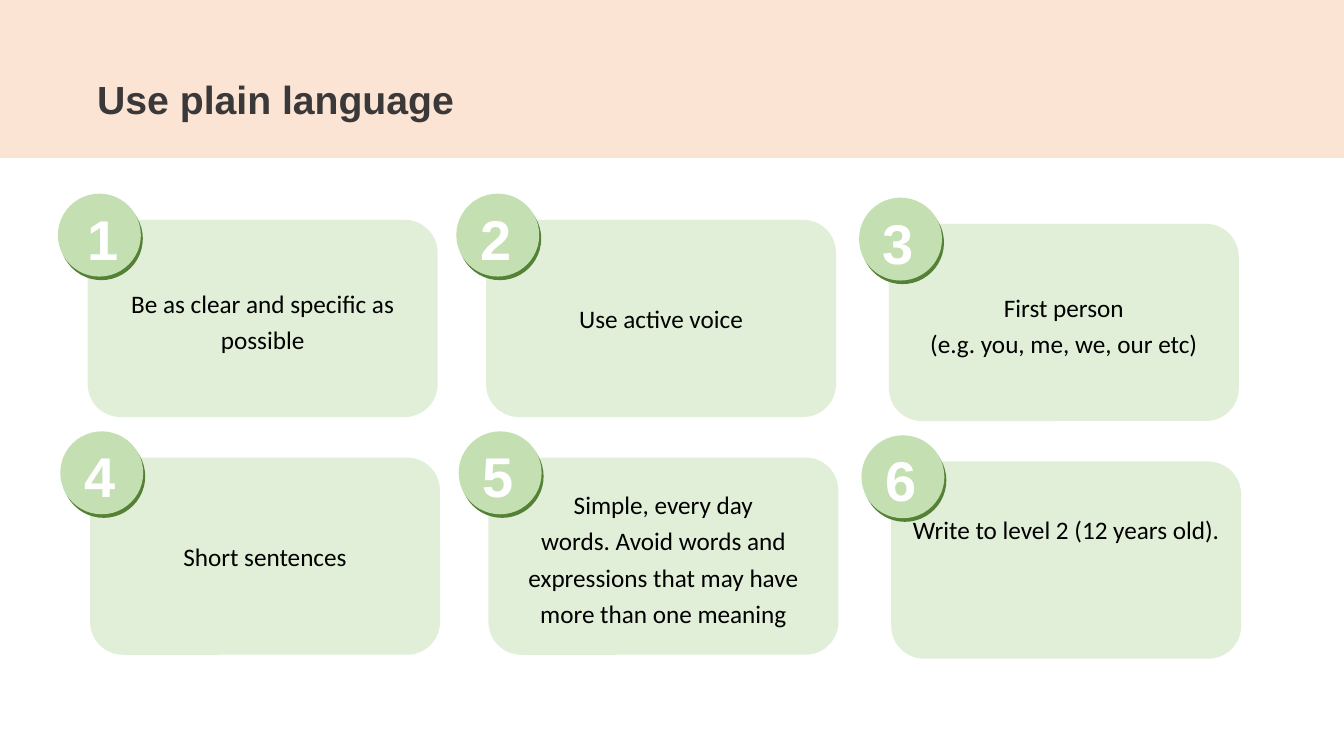
from pptx import Presentation
from pptx.dml.color import RGBColor
from pptx.enum.shapes import MSO_SHAPE
from pptx.enum.text import MSO_ANCHOR, PP_ALIGN
from pptx.util import Cm, Pt

RECT = MSO_SHAPE.RECTANGLE
ROUND = MSO_SHAPE.ROUNDED_RECTANGLE
OVAL = MSO_SHAPE.OVAL
MIDDLE = MSO_ANCHOR.MIDDLE
LEFT, CENTER = PP_ALIGN.LEFT, PP_ALIGN.CENTER

PEACH = RGBColor(0xFB, 0xE4, 0xD4)
PALE = RGBColor(0xE1, 0xEF, 0xD8)
GREEN = RGBColor(0xC4, 0xE0, 0xB2)
DARK = RGBColor(0x54, 0x81, 0x35)
GREY = RGBColor(0x3A, 0x38, 0x38)
BLACK = RGBColor(0, 0, 0)
WHITE = RGBColor(0xFF, 0xFF, 0xFF)

# Text, line spacing, room kept below the text (cm)
CARDS = [
    ("Be as clear and specific as possible", 1.2, 0.13),
    ("Use active voice", 1, 0.13),
    ("First person\v(e.g. you, me, we, our etc)", 1.2, 0.13),
    ("Short sentences", 1, 0.13),
    ("Simple, every day\nwords. Avoid words and expressions "
     "that may have more than one meaning", 1.2, 0.13),
    ("Write to level 2 (12 years old).", 1, 1.65),
]
COLS = (2.21, 12.25, 22.4)
ROWS = (5.54, 11.53)
DROP = (0, 0, 0.1)    # shift down, by column
SHIFT = (0, 0.06)     # shift right, by row


class Deck:
    head, body = "Arial", "Calibri"

    def __init__(self, slide):
        self.slide = slide

    def shape(self, kind, x, y, w, h, fill):
        item = self.slide.shapes.add_shape(kind, Cm(x), Cm(y), Cm(w), Cm(h))
        item.shadow.inherit = False
        item.fill.solid()
        item.fill.fore_color.rgb = fill
        item.line.fill.background()
        return item

    def words(self, frame, text, font, size, color, bold, align, space):
        frame.word_wrap = True
        frame.vertical_anchor = MIDDLE
        frame.text = text
        for para in frame.paragraphs:
            para.alignment = align
            para.line_spacing = space
            para.font.name = font
            para.font.size = Pt(size)
            para.font.bold = bold
            para.font.color.rgb = color

    def label(self, text, x, y, w, h, size, color):
        box = self.slide.shapes.add_textbox(Cm(x), Cm(y), Cm(w), Cm(h))
        self.words(box.text_frame, text, self.head, size, color, True,
                   LEFT, 1.07)

    def card(self, num, text, x, y, space, below):
        panel = self.shape(ROUND, x, y, 8.82, 4.97, PALE)
        frame = panel.text_frame
        self.words(frame, text, self.body, 18, BLACK, False, CENTER, space)
        frame.margin_bottom = Cm(below)
        # Numbered badge with its dark edge
        self.shape(OVAL, x - 0.7, y - 0.57, 2.09, 2.09, DARK)
        self.shape(OVAL, x - 0.75, y - 0.66, 2.09, 2.09, GREEN)
        inset = 0.25 if num == 1 else 0.4
        self.label(str(num), x - inset, y - 0.26, 1.65, 1.3, 40, WHITE)


def main():
    prs = Presentation()
    prs.slide_width, prs.slide_height = Cm(33.87), Cm(19.05)
    deck = Deck(prs.slides.add_slide(prs.slide_layouts[6]))

    # Title band
    deck.shape(RECT, 0, 0, 33.87, 3.98, PEACH)
    deck.label("Use plain language", 2.2, 1.65, 21.7, 1.6, 28, GREY)

    # Cards in two rows of three
    for i, (text, space, below) in enumerate(CARDS):
        row, col = divmod(i, len(COLS))
        deck.card(i + 1, text, COLS[col] + SHIFT[row],
                  ROWS[row] + DROP[col], space, below)

    prs.save("out.pptx")


if __name__ == "__main__":
    main()
